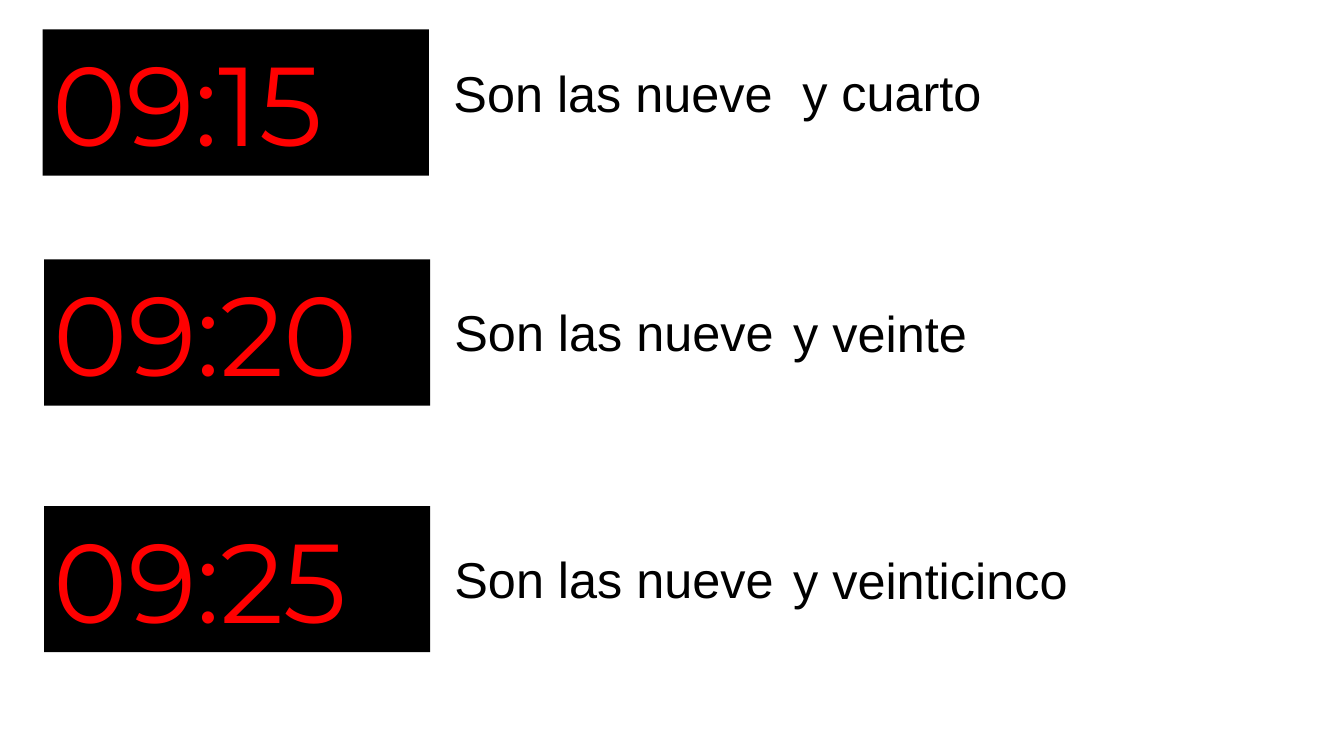
import pptx
import pptx.dml.color
import pptx.enum.shapes
import pptx.enum.text
import pptx.util

Pt = pptx.util.Pt
COLOURS = {"display": "000000", "digits": "FF0000", "text": "000000"}

# time, (left, top) of the clock, (left, top, width) of the hour, minutes, (left, top, width) of the minutes
TIMES = [
    ("09:15", (30.5, 21), (316.8, 41, 400), "y cuarto", (566, 40.3, 146)),
    ("09:20", (31.5, 185.3), (317.5, 211.7, 539), "y veinte", (559.5, 212.4, 146)),
    ("09:25", (31.5, 361.5), (317.5, 388.1, 539), "y veinticinco", (559.5, 388.8, 238)),
]


class ClockSlide:
    def __init__(self, presentation):
        self.slide = presentation.slides.add_slide(presentation.slide_layouts[6])
        self.clock_size = (275.8, 104.4)
        self.phrase_height = 51

    def colour(self, name):
        return pptx.dml.color.RGBColor.from_string(COLOURS[name])

    def set_wording(self, box, wording, font_name, size, colour):
        frame = box.text_frame
        frame.word_wrap = True
        frame.auto_size = pptx.enum.text.MSO_AUTO_SIZE.SHAPE_TO_FIT_TEXT
        frame.vertical_anchor = pptx.enum.text.MSO_ANCHOR.TOP
        frame.text = wording
        paragraph = frame.paragraphs[0]
        paragraph.alignment = pptx.enum.text.PP_ALIGN.LEFT
        font = paragraph.runs[0].font
        font.name = font_name
        font.size = Pt(size)
        font.color.rgb = self.colour(colour)

    def clock(self, time, position):
        display = self.slide.shapes.add_shape(
            pptx.enum.shapes.MSO_SHAPE.RECTANGLE,
            *map(Pt, position + self.clock_size))
        display.shadow.inherit = False
        display.fill.solid()
        display.fill.fore_color.rgb = self.colour("display")
        display.line.fill.background()
        self.set_wording(display, time, "Montserrat", 80, "digits")

    def phrase(self, wording, place):
        box = self.slide.shapes.add_textbox(*map(Pt, place + (self.phrase_height,)))
        self.set_wording(box, wording, "Arial", 36, "text")


def main():
    presentation = pptx.Presentation()
    presentation.slide_width = Pt(960)
    presentation.slide_height = Pt(540)
    clocks = ClockSlide(presentation)
    for time, clock_at, hour_at, minutes, minutes_at in TIMES:
        clocks.clock(time, clock_at)
        clocks.phrase("Son las nueve", hour_at)
        clocks.phrase(minutes, minutes_at)
    presentation.save("out.pptx")


if __name__ == "__main__":
    main()
